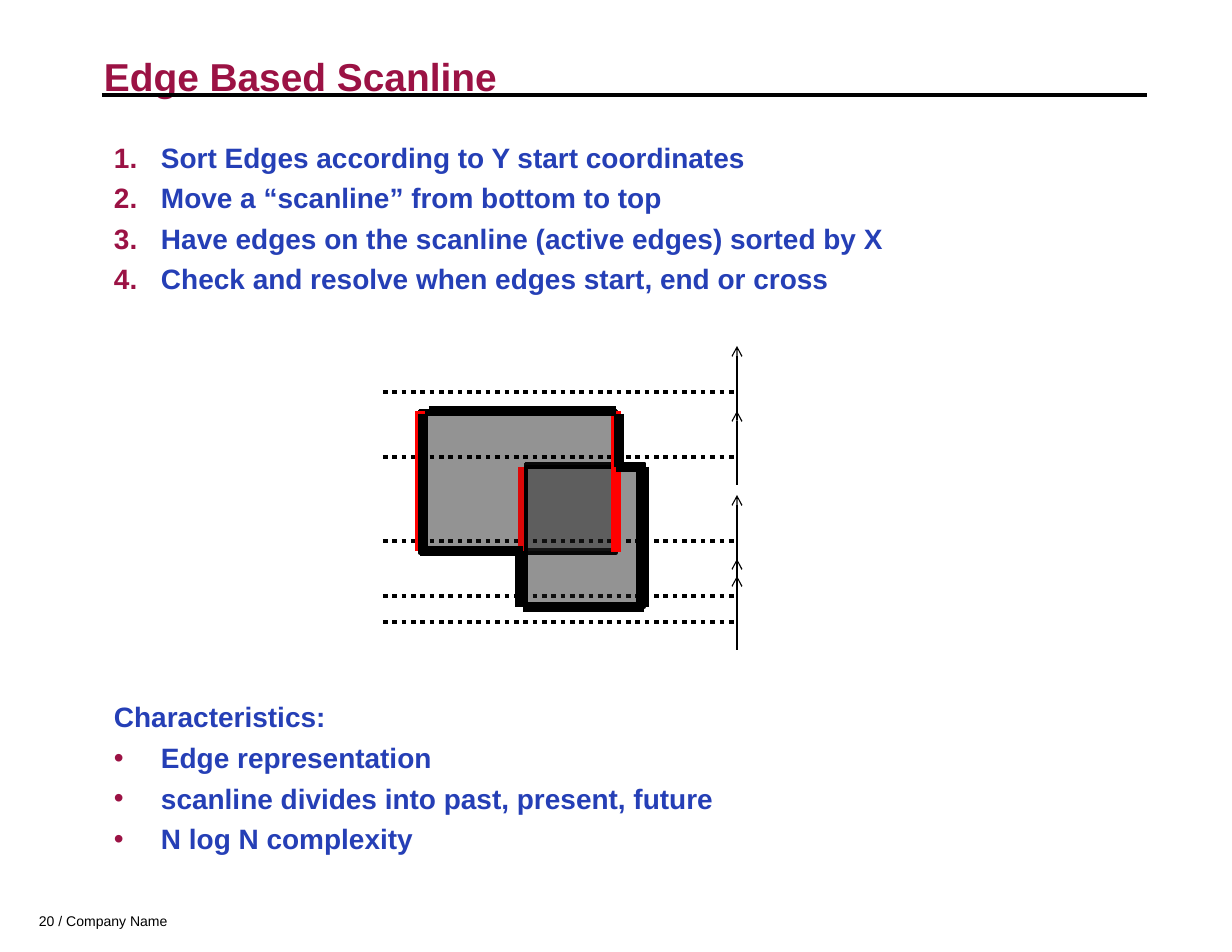
from dataclasses import dataclass

from lxml.etree import SubElement
from pptx import Presentation
from pptx.dml.color import RGBColor
from pptx.enum.dml import MSO_LINE
from pptx.enum.shapes import MSO_CONNECTOR, MSO_SHAPE
from pptx.enum.text import MSO_ANCHOR, MSO_AUTO_SIZE, PP_ALIGN
from pptx.oxml.ns import qn
from pptx.util import Emu, Pt

SCALE = 914400 // 112


@dataclass(frozen=True)
class Theme:
    font: str = "Arial"
    wine: str = "9B1244"
    blue: str = "253FB6"
    black: str = "000000"
    red: str = "FF0000"
    gray: str = "323232"
    title: int = 25
    body: int = 18
    foot: int = 9


THEME = Theme()
STEPS = ["Sort Edges according to Y start coordinates",
         "Move a “scanline” from bottom to top",
         "Have edges on the scanline (active edges) sorted by X",
         "Check and resolve when edges start, end or cross"]
TRAITS = ["Edge representation",
          "scanline divides into past, present, future",
          "N log N complexity"]

RECTS = [(37, 66, 196, 139), (143, 119, 118, 140)]
# Each stage: scanline y, arrow start below it, rectangle shift, red and black edges
STAGES = [
    (277, 28, 0, [], []),
    (251, 37, 0, [], []),
    (196, 28, 0,
     [(140, 122, 140, 262), (233, 66, 233, 206), (261, 122, 261, 262)],
     [(261, 204, 261, 262)]),
    (112, 28, 3,
     [(37, 66, 37, 206), (233, 66, 233, 207)],
     [(140, 262, 258, 262), (37, 206, 137, 206), (137, 206, 137, 262),
      (258, 122, 258, 262), (258, 122, 233, 122)]),
    (47, 28, None, [],
     [(143, 262, 261, 262), (40, 206, 140, 206), (140, 206, 140, 262),
      (261, 122, 261, 262), (40, 69, 40, 206), (236, 69, 236, 122),
      (261, 122, 236, 122), (46, 66, 233, 66)]),
]


def px(n):
    return Emu(n * SCALE)


def place(shape, box):
    shape.left, shape.top, shape.width, shape.height = map(px, box)


def setup(frame, side, top, wrap=True):
    frame.word_wrap = wrap
    frame.auto_size = MSO_AUTO_SIZE.NONE
    frame.vertical_anchor = MSO_ANCHOR.TOP
    frame.margin_left = frame.margin_right = px(side)
    frame.margin_top = frame.margin_bottom = px(top)


def style(para, size, color, bold=True):
    para.alignment = PP_ALIGN.LEFT
    font = para.font
    font.name, font.size, font.bold = THEME.font, Pt(size), bold
    font.color.rgb = RGBColor.from_string(color)


def bullet(para, tag, **attrs):
    props = para._p.get_or_add_pPr()
    tint = SubElement(props, qn("a:buClr"))
    SubElement(tint, qn("a:srgbClr"), val=THEME.wine)
    SubElement(props, qn("a:buFont"), typeface=THEME.font)
    SubElement(props, qn(tag), **attrs)


def items(frame, lines, tag, head=None, **attrs):
    """Fill a frame with marked lines, after an optional unmarked heading."""
    rows = ([head] if head else []) + lines
    for i, text in enumerate(rows):
        para = frame.paragraphs[0] if i == 0 else frame.add_paragraph()
        para.text = text
        props = para._p.get_or_add_pPr()
        props.set("marL", str(px(47)))
        props.set("indent", str(-px(47)))
        if text != head:
            bullet(para, tag, **attrs)
        para.space_before = Pt(4.5 if i else 0)
        style(para, THEME.body, THEME.blue)


def stroke(shapes, ends, color, width):
    line = shapes.add_connector(MSO_CONNECTOR.STRAIGHT, *map(px, ends))
    line.line.color.rgb = RGBColor.from_string(color)
    line.line.width = Pt(width)
    SubElement(line._element.spPr, qn("a:effectLst"))
    return line


def pane(shapes, box):
    """Add a translucent outlined rectangle."""
    rect = shapes.add_shape(MSO_SHAPE.RECTANGLE, *map(px, box))
    rect.shadow.inherit = False
    rect.fill.solid()
    rect.fill.fore_color.rgb = RGBColor.from_string(THEME.gray)
    tint = rect._element.spPr.find(qn("a:solidFill"))[0]
    SubElement(tint, qn("a:alpha"), val="17000")
    rect.line.color.rgb = RGBColor.from_string(THEME.black)
    rect.line.width = Pt(2.25)


def stage(slide, box, scan, drop, shift, reds, blacks):
    """Group one scanline position with its panes, arrow and edges."""
    x, y, wide, _ = box
    shapes = slide.shapes.add_group_shape().shapes
    if shift is not None:
        for left, top, w, h in RECTS:
            pane(shapes, (x + left, y + top + shift, w, h))
    level, end = y + scan, x + wide
    dots = stroke(shapes, (x, level, end, level), THEME.black, 3)
    dots.line.dash_style = MSO_LINE.ROUND_DOT
    base = level + drop
    arrow = stroke(shapes, (end, base, end, base - 74), THEME.black, 0.75)
    SubElement(arrow.line._get_or_add_ln(), qn("a:tailEnd"), type="arrow")
    for color, edges in ((THEME.red, reds), (THEME.black, blacks)):
        for x1, y1, x2, y2 in edges:
            stroke(shapes, (x + x1, y + y1, x + x2, y + y2), color, 6)


def diagram(slide, box):
    for row in STAGES:
        stage(slide, box, *row)


def header(slide, box):
    x, y, wide, _ = box
    stroke(slide.shapes, (x - 2, y + 58, x + wide + 1, y + 58), THEME.black, 2.5)
    title = slide.shapes.title
    place(title, box)
    setup(title.text_frame, 0, 11)
    title.text_frame.text = "Edge Based Scanline"
    para = title.text_frame.paragraphs[0]
    para.line_spacing = 1.1
    style(para, THEME.title, THEME.wine)


def method(slide, box):
    body = slide.placeholders[1]
    place(body, box)
    setup(body.text_frame, 12, 9)
    items(body.text_frame, STEPS, "a:buAutoNum", type="arabicPeriod")


def traits(slide, box):
    frame = slide.shapes.add_textbox(*map(px, box)).text_frame
    setup(frame, 12, 9)
    items(frame, TRAITS, "a:buChar", head="Characteristics:", char="•")


def footer(slide, box):
    frame = slide.shapes.add_textbox(*map(px, box)).text_frame
    setup(frame, 11, 6, wrap=False)
    frame.text = "20 / Company Name"
    style(frame.paragraphs[0], THEME.foot, THEME.black, bold=False)


def main():
    deck = Presentation()
    deck.slide_width, deck.slide_height = px(1232), px(952)
    slide = deck.slides.add_slide(deck.slide_layouts[1])
    header(slide, (104, 37, 1042, 95))
    footer(slide, (28, 906, 146, 28))
    method(slide, (102, 131, 1044, 177))
    traits(slide, (102, 691, 1044, 75))
    diagram(slide, (383, 345, 354, 305))
    deck.save("out.pptx")


if __name__ == "__main__":
    main()
